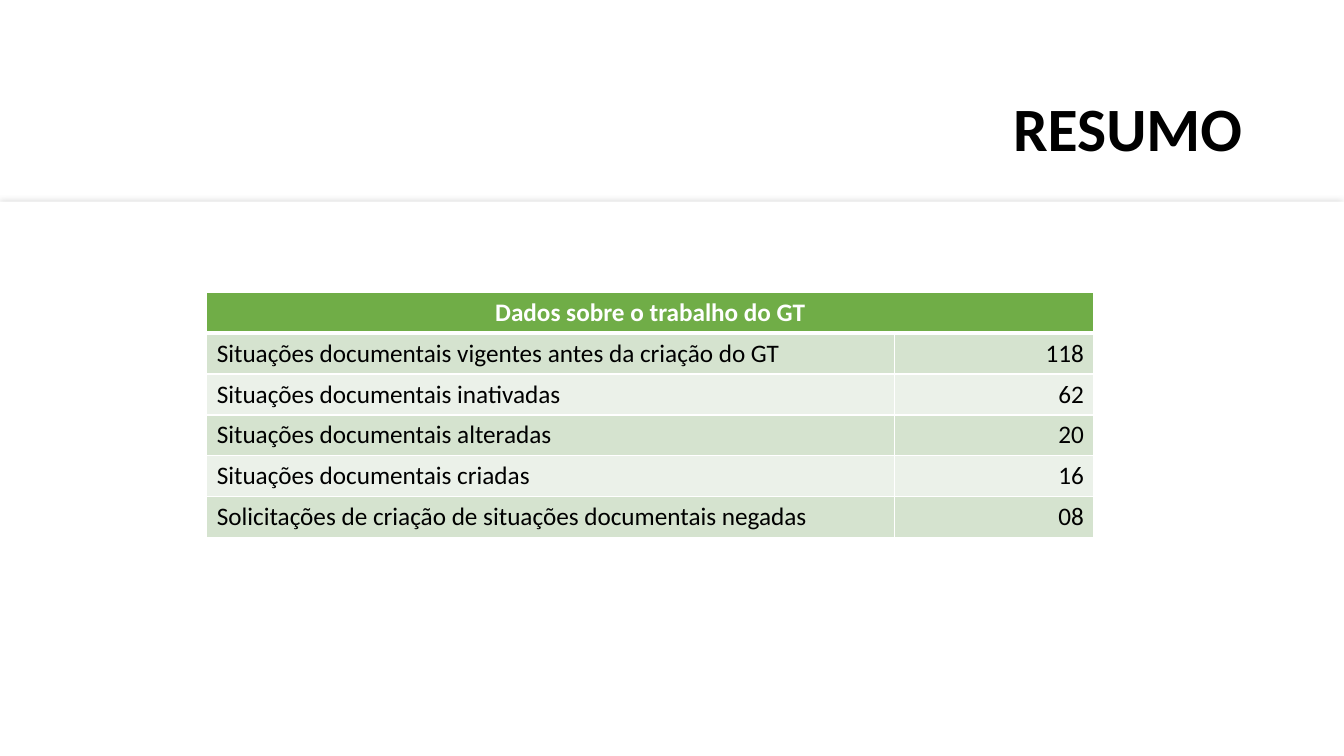
import pptx
import pptx.dml.color
import pptx.enum.shapes
import pptx.enum.text
import pptx.oxml
import pptx.oxml.ns
import pptx.util
from pptx.dml.color import RGBColor
from pptx.util import Inches

TITLE = "RESUMO"
TABLE_HEADING = "Dados sobre o trabalho do GT"
TABLE_ROWS = [
    ("Situações documentais vigentes antes da criação do GT", "118"),
    ("Situações documentais inativadas", "62"),
    ("Situações documentais alteradas", "20"),
    ("Situações documentais criadas", "16"),
    ("Solicitações de criação de situações documentais negadas", "08"),
]
COLUMN_WIDTHS = (6.82, 1.98)
ROW_HEIGHT = 0.405
FONT = "Calibri"

WHITE = RGBColor(0xFF, 0xFF, 0xFF)
BLACK = RGBColor(0x00, 0x00, 0x00)
GREEN = RGBColor(0x70, 0xAD, 0x47)
BANDS = (RGBColor(0xD5, 0xE3, 0xCF), RGBColor(0xEB, 0xF1, 0xE9))
SHADOW_GRAY = RGBColor(0xA6, 0xA6, 0xA6)

LEFT = pptx.enum.text.PP_ALIGN.LEFT
CENTER = pptx.enum.text.PP_ALIGN.CENTER
RIGHT = pptx.enum.text.PP_ALIGN.RIGHT
NAMESPACE = pptx.oxml.ns.nsdecls("a")


def write(paragraph, text, size, color, bold, alignment):
    paragraph.alignment = alignment
    run = paragraph.add_run()
    run.text = text
    run.font.name = FONT
    run.font.size = pptx.util.Pt(size)
    run.font.bold = bold
    run.font.color.rgb = color


def set_borders(cell, bottom_width):
    widths = {"lnL": 1, "lnR": 1, "lnT": 1, "lnB": bottom_width}
    properties = cell._tc.get_or_add_tcPr()
    for position, (side, width) in enumerate(widths.items()):
        properties.insert(position, pptx.oxml.parse_xml(
            f'<a:{side} {NAMESPACE} w="{pptx.util.Pt(width)}"><a:solidFill>'
            f'<a:srgbClr val="{WHITE}"/></a:solidFill></a:{side}>'))


def style_cell(cell, fill, bottom_width=1):
    cell.fill.solid()
    cell.fill.fore_color.rgb = fill
    set_borders(cell, bottom_width)


def add_content_panel(slide):
    panel = slide.shapes.add_shape(
        pptx.enum.shapes.MSO_SHAPE.RECTANGLE,
        Inches(0), Inches(2), Inches(13.33), Inches(5.5))
    panel.fill.solid()
    panel.fill.fore_color.rgb = WHITE
    panel.line.fill.background()
    panel.shadow.inherit = False
    effects = panel._element.spPr.find(pptx.oxml.ns.qn("a:effectLst"))
    effects.append(pptx.oxml.parse_xml(
        f'<a:outerShdw {NAMESPACE} blurRad="{pptx.util.Pt(5)}" dist="0" dir="0">'
        f'<a:srgbClr val="{SHADOW_GRAY}"><a:alpha val="42000"/></a:srgbClr>'
        '</a:outerShdw>'))


def add_summary_table(slide):
    row_count = len(TABLE_ROWS) + 1
    table = slide.shapes.add_table(
        row_count, len(COLUMN_WIDTHS), Inches(2.05), Inches(2.9),
        Inches(sum(COLUMN_WIDTHS)), Inches(ROW_HEIGHT * row_count)).table
    for column, width in zip(table.columns, COLUMN_WIDTHS):
        column.width = Inches(width)
    for row in table.rows:
        row.height = Inches(ROW_HEIGHT)

    heading = table.cell(0, 0)
    heading.merge(table.cell(0, 1))
    for cell in table.rows[0].cells:
        style_cell(cell, GREEN, bottom_width=3)
    write(heading.text_frame.paragraphs[0], TABLE_HEADING, 18, WHITE, True, CENTER)

    for row_index, values in enumerate(TABLE_ROWS):
        for column_index, (text, alignment) in enumerate(zip(values, (LEFT, RIGHT))):
            cell = table.cell(row_index + 1, column_index)
            style_cell(cell, BANDS[row_index % 2], 1)
            if row_index == 0:
                top = cell._tc.tcPr.find(pptx.oxml.ns.qn("a:lnT"))
                top.set("w", str(pptx.util.Pt(3)))
            write(cell.text_frame.paragraphs[0], text, 18, BLACK, False, alignment)


def add_title(slide):
    frame = slide.shapes.add_textbox(
        Inches(0.92), Inches(0.64), Inches(11.5), Inches(1.32)).text_frame
    frame.word_wrap = True
    frame.vertical_anchor = pptx.enum.text.MSO_ANCHOR.MIDDLE
    paragraph = frame.paragraphs[0]
    paragraph.line_spacing = 0.9
    write(paragraph, TITLE, 44, BLACK, True, RIGHT)


def main():
    presentation = pptx.Presentation()
    presentation.slide_width = Inches(13.33)
    presentation.slide_height = Inches(7.5)
    slide = presentation.slides.add_slide(presentation.slide_layouts[6])
    add_content_panel(slide)
    add_summary_table(slide)
    add_title(slide)
    presentation.save("out.pptx")


if __name__ == "__main__":
    main()
